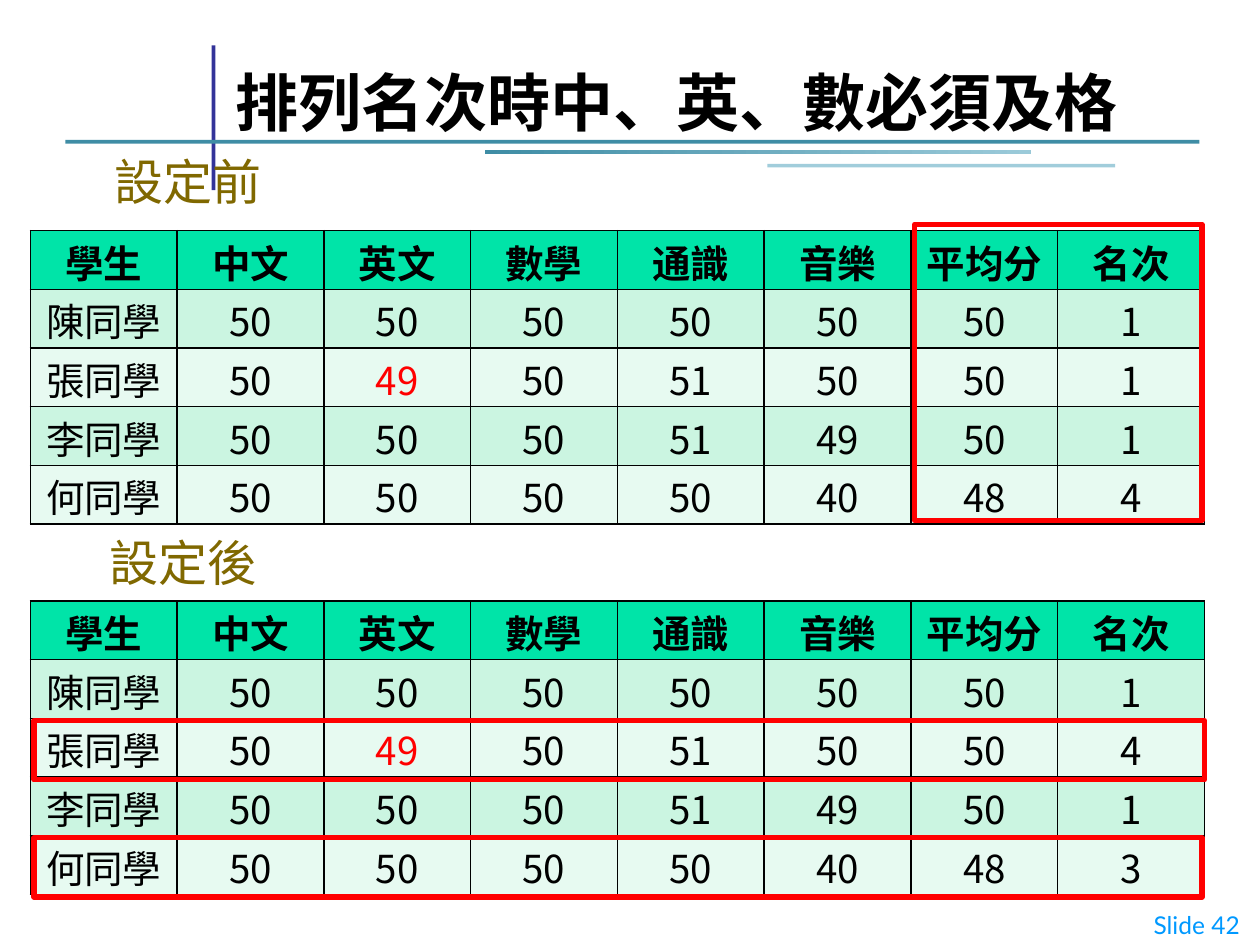
from lxml import etree
from pptx import Presentation
from pptx.dml.color import RGBColor
from pptx.enum import shapes, text
from pptx.oxml import ns
from pptx.util import Inches, Pt

THEME = {
    "cjk": "Noto Sans CJK SC", "latin": "Lato",
    "title": 36, "label": 28, "cell": 22, "number": 14,
    "black": "000000", "red": "FF0000", "olive": "806800", "blue": "0099FF",
    "indigo": "333399", "teal": "3F8DA5", "sky": "9BCAD9", "pale": "A1CDDB",
    "header": "00E4A8", "bands": ("CBF5E1", "E7FAF1"),
}

TITLE = "排列名次時中、英、數必須及格"
SLIDE_NUMBER = "Slide 42"
SUBJECTS = ("學生", "中文", "英文", "數學", "通識", "音樂", "平均分", "名次")
SCORES = (
    ("陳同學", 50, 50, 50, 50, 50, 50),
    ("張同學", 50, 49, 50, 51, 50, 50),
    ("李同學", 50, 50, 50, 51, 49, 50),
    ("何同學", 50, 50, 50, 50, 40, 48),
)
FAILED = (2, 2)
RANKINGS = (
    {"label": "設定前", "label_at": (0.24, 1.2), "top": 1.83, "ranks": (1, 1, 1, 4)},
    {"label": "設定後", "label_at": (0.2, 4.23), "top": 4.77, "ranks": (1, 4, 1, 3)},
)
RULES = (
    ((1.68, 0.36, 0.03, 1.15), ("indigo",)),
    ((0.52, 1.11, 9, 0.03), ("teal",)),
    ((3.85, 1.19, 4.33, 0.03), ("teal", "sky")),
    ((6.09, 1.3, 2.76, 0.03), ("pale",)),
)
HIGHLIGHTS = (
    (7.26, 1.78, 2.28, 2.35),
    (0.27, 5.72, 9.29, 0.47),
    (0.27, 6.65, 9.27, 0.47),
)
TABLE_LEFT, TABLE_WIDTH, TABLE_HEIGHT = 0.24, 9.32, 2.33


def color(name):
    return RGBColor.from_string(THEME.get(name, name))


def write(frame, words, size, ink, align, font="cjk", bold=False):
    paragraph = frame.paragraphs[0]
    paragraph.text = words
    paragraph.alignment = align
    paragraph.font.size = Pt(THEME[size])
    paragraph.font.bold = bold
    paragraph.font.name = THEME[font]
    paragraph.font.color.rgb = color(ink)
    if font == "cjk":
        defaults = paragraph.font._element
        east_asian = etree.SubElement(defaults, ns.qn("a:ea"))
        east_asian.set("typeface", THEME[font])
        for run in paragraph.runs:
            properties = run._r.get_or_add_rPr()
            etree.SubElement(properties, ns.qn("a:ea")).set("typeface", THEME[font])


def add_words(slide, box, words, size, ink, align, anchor, inset=0, **style):
    frame = slide.shapes.add_textbox(*map(Inches, box)).text_frame
    frame.word_wrap = True
    frame.vertical_anchor = anchor
    frame.margin_top = frame.margin_bottom = Inches(inset)
    write(frame, words, size, ink, align, **style)
    return frame


def add_rectangle(slide, box):
    rectangle = slide.shapes.add_shape(shapes.MSO_SHAPE.RECTANGLE, *map(Inches, box))
    rectangle.shadow.inherit = False
    return rectangle


def add_rule(slide, box, tints):
    rule = add_rectangle(slide, box)
    rule.line.fill.background()
    if len(tints) == 1:
        rule.fill.solid()
        rule.fill.fore_color.rgb = color(tints[0])
        return
    rule.fill.gradient()
    rule.fill.gradient_angle = 0
    for stop, tint in zip(rule.fill.gradient_stops, tints):
        stop.color.rgb = color(tint)


def add_highlight(slide, box):
    highlight = add_rectangle(slide, box)
    highlight.fill.background()
    highlight.line.color.rgb = color("red")
    highlight.line.width = Pt(3)


def border(cell):
    properties = cell._tc.get_or_add_tcPr()
    for place, side in enumerate(("lnL", "lnR", "lnT", "lnB")):
        line = etree.Element(ns.qn(f"a:{side}"), w=str(Pt(1)))
        solid = etree.SubElement(line, ns.qn("a:solidFill"))
        etree.SubElement(solid, ns.qn("a:srgbClr"), val=THEME["black"])
        properties.insert(place, line)


def add_ranking(slide, top, ranks):
    rows = [SUBJECTS] + [(*score, rank) for score, rank in zip(SCORES, ranks)]
    box = (TABLE_LEFT, top, TABLE_WIDTH, TABLE_HEIGHT)
    table = slide.shapes.add_table(len(rows), len(SUBJECTS), *map(Inches, box)).table
    for row, values in enumerate(rows):
        table.rows[row].height = int(Inches(TABLE_HEIGHT) / len(rows))
        fill = THEME["bands"][(row - 1) % 2] if row else "header"
        for column, value in enumerate(values):
            cell = table.cell(row, column)
            cell.margin_left = cell.margin_right = 0
            cell.margin_top = cell.margin_bottom = 0
            cell.vertical_anchor = text.MSO_ANCHOR.BOTTOM
            cell.fill.solid()
            cell.fill.fore_color.rgb = color(fill)
            border(cell)
            ink = "red" if (row, column) == FAILED else "black"
            write(cell.text_frame, str(value), "cell", ink, text.PP_ALIGN.CENTER, bold=row == 0)


def main():
    deck = Presentation()
    deck.slide_width, deck.slide_height = Inches(10), Inches(7.5)
    slide = deck.slides.add_slide(deck.slide_layouts[6])
    align, anchor = text.PP_ALIGN, text.MSO_ANCHOR

    for box, tints in RULES:
        add_rule(slide, box, tints)
    number = add_words(slide, (0, 7.17, 10, 0.33), SLIDE_NUMBER, "number", "blue",
                       align.RIGHT, anchor.TOP, inset=0.05, font="latin")
    number.margin_right = Inches(0.16)
    add_words(slide, (1.77, 0.51, 8.69, 0.59), TITLE, "title", "black",
              align.LEFT, anchor.BOTTOM, bold=True)
    for ranking in RANKINGS:
        add_words(slide, (*ranking["label_at"], 2.5, 0.57), ranking["label"],
                  "label", "olive", align.CENTER, anchor.TOP)
        add_ranking(slide, ranking["top"], ranking["ranks"])
    for box in HIGHLIGHTS:
        add_highlight(slide, box)

    deck.save("out.pptx")


if __name__ == "__main__":
    main()
